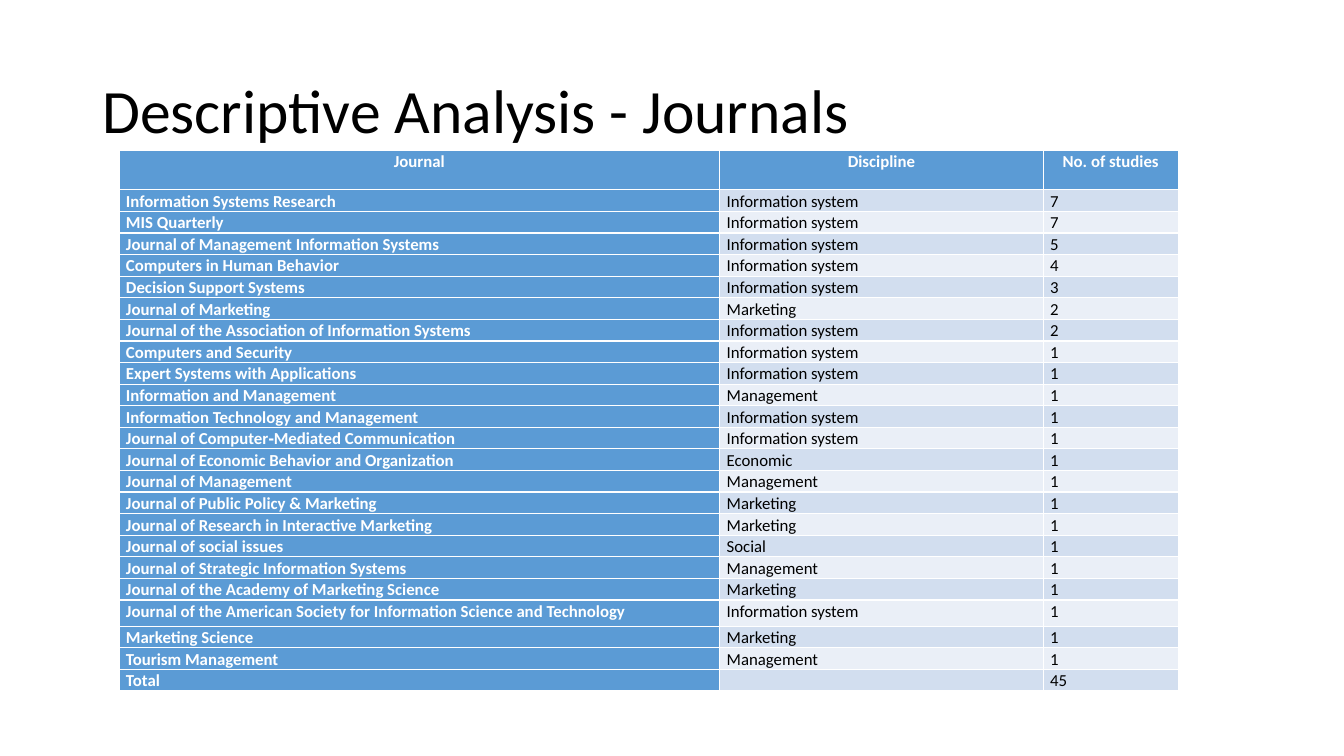
from lxml.etree import SubElement
from pptx import Presentation
from pptx.dml.color import RGBColor
from pptx.enum.text import MSO_ANCHOR, PP_ALIGN
from pptx.oxml.ns import qn
from pptx.util import Pt

COLORS = {"head": "5B9BD5", "odd": "D2DEEF", "even": "EAEFF7",
          "white": "FFFFFF", "black": "000000"}
FONT = "Calibri"
INFO = "Information system"
ROWS = [
    ("Journal", "Discipline", "No. of studies"),
    ("Information Systems Research", INFO, 7),
    ("MIS Quarterly", INFO, 7),
    ("Journal of Management Information Systems", INFO, 5),
    ("Computers in Human Behavior", INFO, 4),
    ("Decision Support Systems", INFO, 3),
    ("Journal of Marketing", "Marketing", 2),
    ("Journal of the Association of Information Systems", INFO, 2),
    ("Computers and Security", INFO, 1),
    ("Expert Systems with Applications", INFO, 1),
    ("Information and Management", "Management", 1),
    ("Information Technology and Management", INFO, 1),
    ("Journal of Computer‐Mediated Communication", INFO, 1),
    ("Journal of Economic Behavior and Organization", "Economic", 1),
    ("Journal of Management", "Management", 1),
    ("Journal of Public Policy & Marketing", "Marketing", 1),
    ("Journal of Research in Interactive Marketing", "Marketing", 1),
    ("Journal of social issues", "Social", 1),
    ("Journal of Strategic Information Systems", "Management", 1),
    ("Journal of the Academy of Marketing Science", "Marketing", 1),
    ("Journal of the American Society for Information Science and Technology",
     INFO, 1),
    ("Marketing Science", "Marketing", 1),
    ("Tourism Management", "Management", 1),
    ("Total", "", 45),
]
WIDTHS = (429.1, 231.1, 96.5)
HEAD_H, ROW_H, TALL_H = 28.1, 15.4, 18.7
TALL_ROW = 20


def set_font(para, size, color, bold=False):
    font = para.font
    font.name, font.size, font.bold = FONT, Pt(size), bold
    font.color.rgb = RGBColor.from_string(COLORS[color])


deck = Presentation()
deck.slide_width, deck.slide_height = Pt(960), Pt(540)
slide = deck.slides.add_slide(deck.slide_layouts[6])

# Title
title = slide.shapes.add_textbox(Pt(66), Pt(28.8), Pt(828), Pt(104.4))
frame = title.text_frame
frame.word_wrap = True
frame.vertical_anchor = MSO_ANCHOR.MIDDLE
frame.text = "Descriptive Analysis - Journals"
frame.paragraphs[0].line_spacing = 0.9
set_font(frame.paragraphs[0], 44, "black")

# Journal table; its default style draws the white grid
heights = [HEAD_H] + [ROW_H] * (len(ROWS) - 1)
heights[TALL_ROW] = TALL_H
table = slide.shapes.add_table(len(ROWS), len(WIDTHS), Pt(85), Pt(107.5),
                               Pt(sum(WIDTHS)), Pt(sum(heights))).table
table.first_col = True
for col, width in zip(table.columns, WIDTHS):
    col.width = Pt(width)

for r, (values, height) in enumerate(zip(ROWS, heights)):
    table.rows[r].height = Pt(height)
    for c, value in enumerate(values):
        cell = table.cell(r, c)
        cell.margin_left = cell.margin_right = Pt(5)
        cell.margin_top = cell.margin_bottom = 0
        label = r == 0 or c == 0
        fill = "head" if label else "odd" if r % 2 else "even"
        cell.fill.solid()
        cell.fill.fore_color.rgb = RGBColor.from_string(COLORS[fill])
        cell.text = str(value)
        para = cell.text_frame.paragraphs[0]
        para.alignment = PP_ALIGN.JUSTIFY if r else PP_ALIGN.CENTER
        para.line_spacing = 1.07
        set_font(para, 12, "white" if label else "black", label)
        if value == "":  # keeps the empty cell from stretching its row
            SubElement(para._p, qn("a:endParaRPr"), sz="1200")

deck.save("out.pptx")
